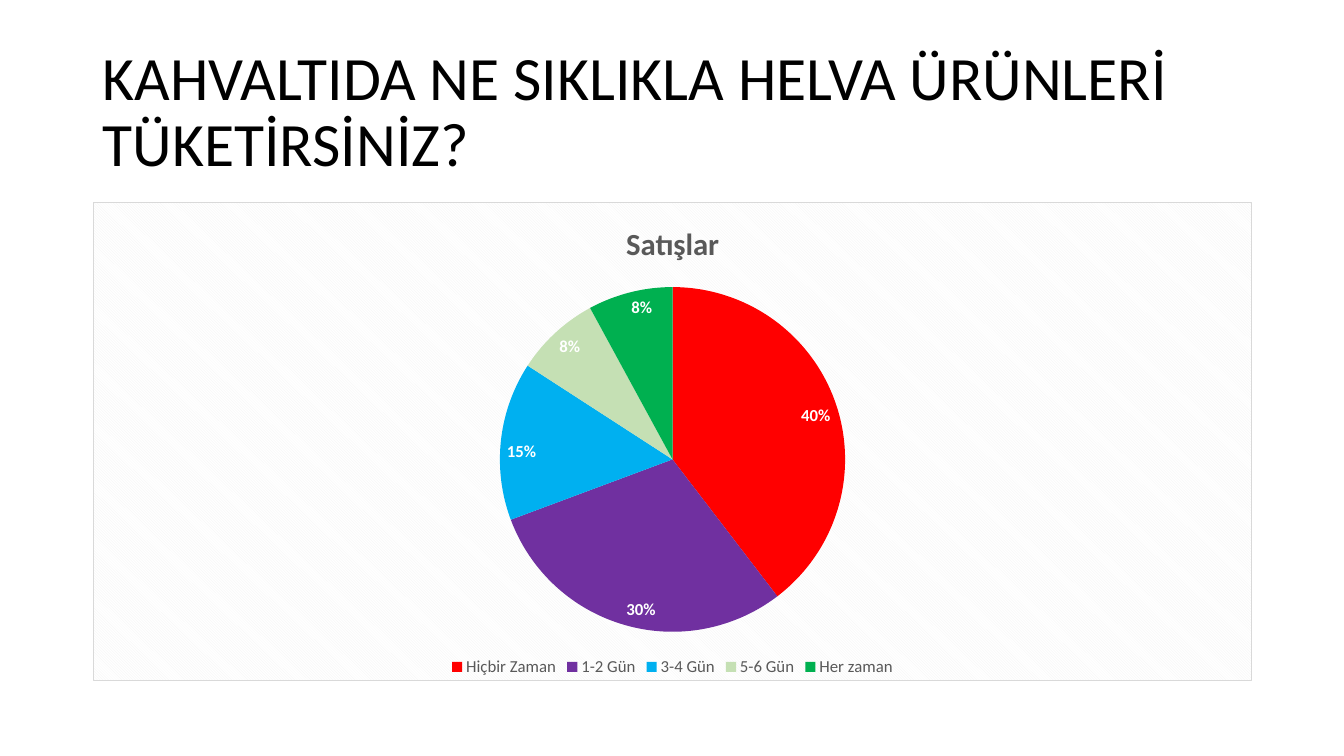
from lxml import etree
from pptx import Presentation
from pptx import util as u
from pptx.chart import data as chart_data
from pptx.dml.color import RGBColor
from pptx.enum import chart as charts, text
from pptx.oxml import ns

FONT = "Calibri"
COLOURS = {
    "title": "000000",
    "muted": "595959",
    "label": "FFFFFF",
    "border": "D9D9D9",
    "hatch": "F2F2F2",
    "ground": "FFFFFF",
}
ANSWERS = [
    ("Hiçbir Zaman", 40, "FF0000"),
    ("1-2 Gün", 30, "7030A0"),
    ("3-4 Gün", 15, "00B0F0"),
    ("5-6 Gün", 8, "C5E0B4"),
    ("Her zaman", 8, "00B050"),
]


def style_font(font, size, colour, bold=False):
    font.name = FONT
    font.size = u.Pt(size)
    font.bold = bold
    font.color.rgb = RGBColor.from_string(COLOURS[colour])


def add_title(slide, wording):
    heading = slide.shapes.title
    heading.left, heading.top = u.Inches(0.92), u.Inches(0.4)
    heading.width, heading.height = u.Inches(11.5), u.Inches(1.45)
    frame = heading.text_frame
    frame.word_wrap = True
    frame.auto_size = text.MSO_AUTO_SIZE.NONE
    frame.vertical_anchor = text.MSO_ANCHOR.MIDDLE
    paragraph = frame.paragraphs[0]
    paragraph.alignment = text.PP_ALIGN.LEFT
    paragraph.line_spacing = 0.9
    run = paragraph.add_run()
    run.text = wording
    style_font(run.font, 44, "title")


def hatch_background(pie_chart):
    properties = etree.fromstring(
        f'<c:spPr {ns.nsdecls("c", "a")}>'
        '<a:pattFill prst="dkDnDiag">'
        f'<a:fgClr><a:srgbClr val="{COLOURS["hatch"]}"/></a:fgClr>'
        f'<a:bgClr><a:srgbClr val="{COLOURS["ground"]}"/></a:bgClr>'
        '</a:pattFill>'
        f'<a:ln w="{u.Pt(0.75)}"><a:solidFill>'
        f'<a:srgbClr val="{COLOURS["border"]}"/></a:solidFill></a:ln>'
        '</c:spPr>'
    )
    pie_chart.element.find(ns.qn("c:chart")).addnext(properties)


def add_answer_pie(slide, series_name):
    answers = chart_data.CategoryChartData()
    answers.categories = [name for name, _, _ in ANSWERS]
    answers.add_series(series_name, [share for _, share, _ in ANSWERS])
    pie_chart = slide.shapes.add_chart(
        charts.XL_CHART_TYPE.PIE,
        u.Inches(0.92), u.Inches(2), u.Inches(11.5), u.Inches(4.76),
        answers,
    ).chart
    style_font(pie_chart.font, 10, "title")

    pie_chart.has_title = True
    caption = pie_chart.chart_title.text_frame.paragraphs[0].add_run()
    caption.text = series_name
    style_font(caption.font, 22, "muted", bold=True)

    pie_chart.has_legend = True
    pie_chart.legend.position = charts.XL_LEGEND_POSITION.BOTTOM
    pie_chart.legend.include_in_layout = False
    style_font(pie_chart.legend.font, 12, "muted")

    plot = pie_chart.plots[0]
    plot.vary_by_categories = True
    slices = plot.series[0]
    for index, (_, _, colour) in enumerate(ANSWERS):
        fill = slices.points[index].format.fill
        fill.solid()
        fill.fore_color.rgb = RGBColor.from_string(colour)

    labels = slices.data_labels
    labels.show_value = False
    labels.show_percentage = True
    labels.number_format = "0%"
    labels.number_format_is_linked = False
    labels.position = charts.XL_LABEL_POSITION.INSIDE_END
    style_font(labels.font, 12, "label", bold=True)
    hatch_background(pie_chart)


def main():
    deck = Presentation()
    deck.slide_width, deck.slide_height = u.Inches(13.33), u.Inches(7.5)
    slide = deck.slides.add_slide(deck.slide_layouts[5])
    add_title(slide, "KAHVALTIDA NE SIKLIKLA HELVA ÜRÜNLERİ TÜKETİRSİNİZ?")
    add_answer_pie(slide, "Satışlar")
    deck.save("out.pptx")


if __name__ == "__main__":
    main()
